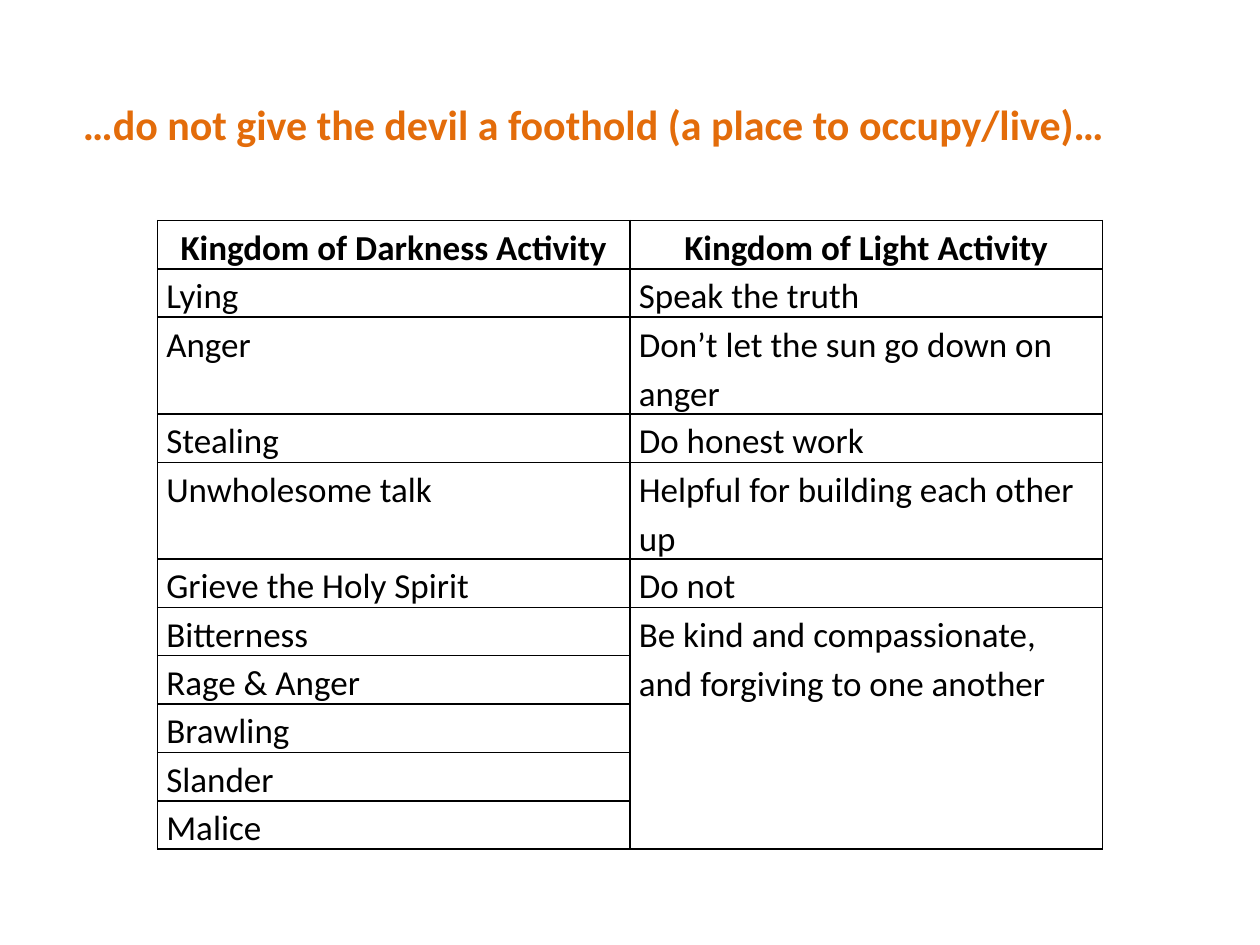
from pptx import Presentation
from pptx.dml.color import RGBColor
from pptx.enum.text import PP_ALIGN
from pptx.oxml import parse_xml
from pptx.oxml.ns import nsdecls
from pptx.util import Inches, Pt

ORANGE = RGBColor(0xE3, 0x6C, 0x0A)
BLACK = RGBColor(0, 0, 0)

HEADER = ("Kingdom of Darkness Activity", "Kingdom of Light Activity")
ACTIVITIES = [
    ("Lying", "Speak the truth", 1),
    ("Anger", "Don’t let the sun go down on anger", 2),
    ("Stealing", "Do honest work", 1),
    ("Unwholesome talk", "Helpful for building each other up", 2),
    ("Grieve the Holy Spirit", "Do not", 1),
    ("Bitterness", "Be kind and compassionate, and forgiving to one another", 1),
    ("Rage & Anger", "", 1),
    ("Brawling", "", 1),
    ("Slander", "", 1),
    ("Malice", "", 1),
]
MERGE_START = 6


def write(tf, text, size=20, color=BLACK, bold=False, align=PP_ALIGN.LEFT, after=0):
    """Write one formatted paragraph into a text frame."""
    p = tf.paragraphs[0]
    p.alignment = align
    p.line_spacing = 1.15
    p.space_after = Pt(after)
    r = p.add_run()
    r.text = text
    r.font.name = "Calibri"
    r.font.size = Pt(size)
    r.font.bold = bold
    r.font.color.rgb = color


def style_cell(cell):
    """Give a cell its margins, black borders and no fill."""
    cell.margin_left = cell.margin_right = Inches(0.07)
    cell.margin_top = cell.margin_bottom = 0
    tcPr = cell._tc.get_or_add_tcPr()
    for side in ("lnL", "lnR", "lnT", "lnB"):
        tcPr.append(parse_xml(
            f'<a:{side} {nsdecls("a")} w="{Pt(1)}"><a:solidFill>'
            f'<a:srgbClr val="{BLACK}"/></a:solidFill></a:{side}>'))
    cell.fill.background()


def add_title(s, x, y, w, h):
    """Place the heading in the given box."""
    tf = s.shapes.add_textbox(x, y, w, h).text_frame
    tf.word_wrap = True
    write(tf, "…do not give the devil a foothold (a place to occupy/live)…",
          size=24, color=ORANGE, bold=True, after=10)


def add_activity_table(s, x, y, w, h):
    """Place the two-column comparison in the given box."""
    rows = [(*HEADER, 1)] + ACTIVITIES
    table = s.shapes.add_table(len(rows), 2, x, y, w, h).table
    table.first_row = table.horz_banding = False
    line_height = h // sum(lines for *_, lines in rows)
    for i, (*texts, lines) in enumerate(rows):
        table.rows[i].height = line_height * lines
        for j, text in enumerate(texts):
            cell = table.cell(i, j)
            style_cell(cell)
            if text:
                write(cell.text_frame, text, bold=i == 0,
                      align=PP_ALIGN.LEFT if i else PP_ALIGN.CENTER)
    table.cell(MERGE_START, 1).merge(table.cell(len(rows) - 1, 1))


def main():
    """Build and save the slide."""
    prs = Presentation()
    prs.slide_width, prs.slide_height = Inches(10), Inches(7.5)
    s = prs.slides.add_slide(prs.slide_layouts[6])
    add_title(s, Inches(0.56), Inches(0.67), Inches(8.67), Inches(0.57))
    add_activity_table(s, Inches(1.25), Inches(1.75), Inches(7.5), Inches(4.98))
    prs.save("out.pptx")


if __name__ == "__main__":
    main()
